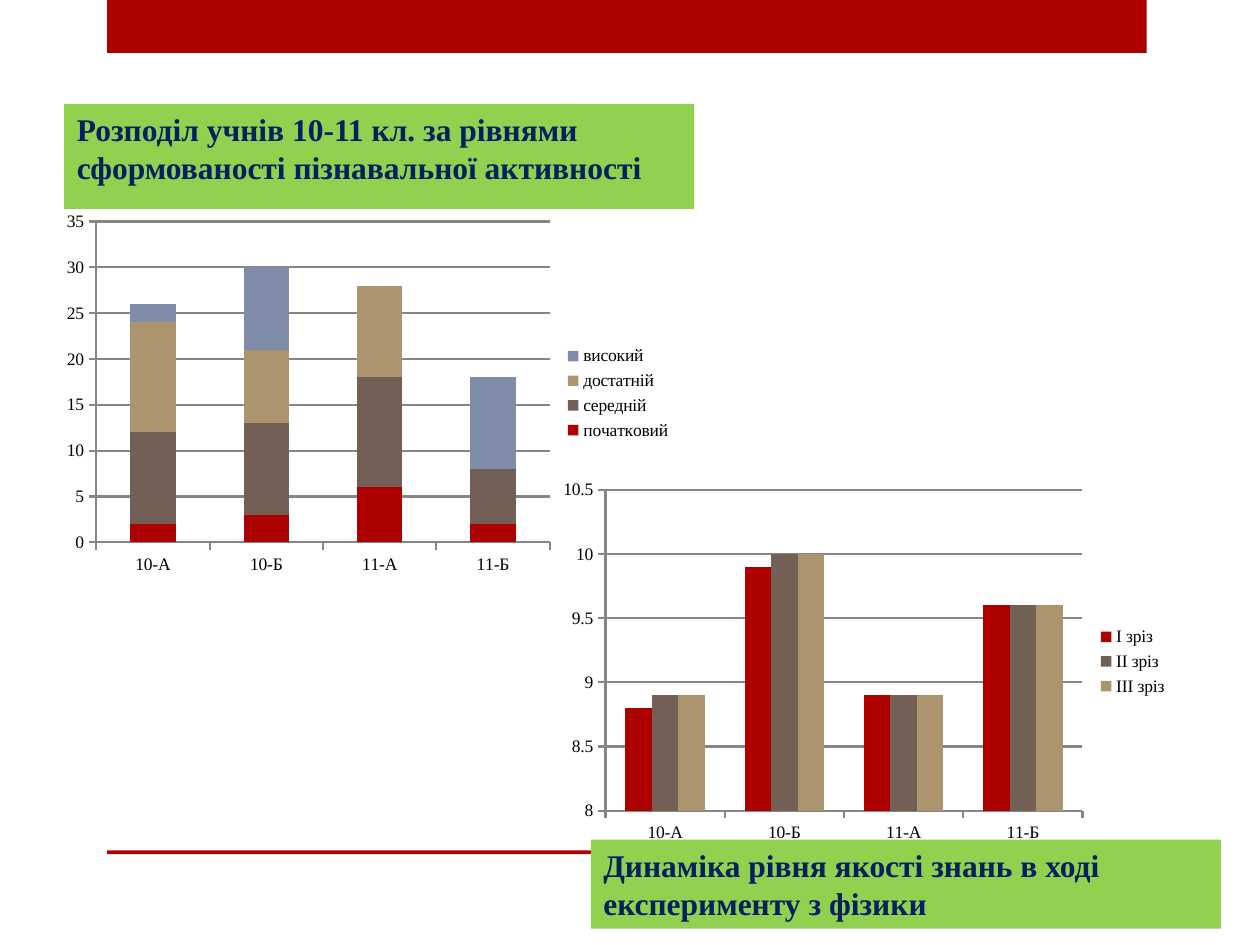
from pptx import Presentation
from pptx.chart.data import CategoryChartData
from pptx.dml.color import RGBColor
from pptx.enum.chart import XL_CHART_TYPE, XL_LEGEND_POSITION, XL_TICK_MARK
from pptx.enum.shapes import MSO_SHAPE
from pptx.enum.text import MSO_ANCHOR, MSO_AUTO_SIZE, PP_ALIGN
from pptx.util import Inches, Pt

RED = RGBColor(0xAD, 0x01, 0x01)
BROWN = RGBColor(0x72, 0x60, 0x56)
SAND = RGBColor(0xAC, 0x95, 0x6E)
STEEL = RGBColor(0x80, 0x8D, 0xA9)
GREEN = RGBColor(0x92, 0xD0, 0x50)
NAVY = RGBColor(0x00, 0x20, 0x60)
GRAY = RGBColor(0x86, 0x86, 0x86)
BLACK = RGBColor(0x00, 0x00, 0x00)

FONT = "Times New Roman"
COLORS = [RED, BROWN, SAND, STEEL]
FORMS = ["10-А", "10-Б", "11-А", "11-Б"]
LEVELS = {
    "початковий": [2, 3, 6, 2],
    "середній": [10, 10, 12, 6],
    "достатній": [12, 8, 10, 0],
    "високий": [2, 9, 0, 10],
}
TESTS = {
    "І зріз": [8.8, 9.9, 8.9, 9.6],
    "ІІ зріз": [8.9, 10, 8.9, 9.6],
    "ІІІ зріз": [8.9, 10, 8.9, 9.6],
}


class Deck:
    """Places elements by shares (percent) of the slide's width and height."""

    def __init__(self):
        self.prs = Presentation()
        self.prs.slide_width, self.prs.slide_height = Inches(10), Inches(7.5)
        self.slide = self.prs.slides.add_slide(self.prs.slide_layouts[5])

    def area(self, left, top, width, height):
        wide, high = self.prs.slide_width, self.prs.slide_height
        return [int(share * size / 100) for share, size in
                zip((left, top, width, height), (wide, high, wide, high))]

    def bar(self, *box):
        shape = self.slide.shapes.add_shape(MSO_SHAPE.RECTANGLE, *self.area(*box))
        shape.shadow.inherit = False
        shape.fill.solid()
        shape.fill.fore_color.rgb = RED
        shape.line.fill.background()

    def title(self, text, *box):
        self.label(self.slide.shapes.title, text, box)

    def note(self, text, *box):
        self.label(self.slide.shapes.add_textbox(*self.area(*box)), text, box)

    def label(self, shape, text, box):
        """Sets place, green fill and bold navy text of a caption."""
        shape.left, shape.top, shape.width, shape.height = self.area(*box)
        shape.fill.solid()
        shape.fill.fore_color.rgb = GREEN
        frame = shape.text_frame
        frame.text = text
        frame.word_wrap = True
        frame.auto_size = MSO_AUTO_SIZE.SHAPE_TO_FIT_TEXT
        frame.vertical_anchor = MSO_ANCHOR.TOP
        para = frame.paragraphs[0]
        para.alignment = PP_ALIGN.LEFT
        font = para.font
        font.name, font.size, font.bold = FONT, Pt(18), True
        font.color.rgb = NAVY

    def chart(self, kind, rows, low, high, step, *box):
        data = CategoryChartData()
        data.categories = FORMS
        for name, vals in rows.items():
            data.add_series(name, vals)
        chart = self.slide.shapes.add_chart(kind, *self.area(*box), data).chart
        chart.has_title = False
        chart.font.name, chart.font.size = FONT, Pt(10)
        chart.font.color.rgb = BLACK
        chart.has_legend = True
        chart.legend.position = XL_LEGEND_POSITION.RIGHT
        chart.legend.include_in_layout = False

        plot = chart.plots[0]
        plot.vary_by_categories = False
        plot.gap_width = 150
        plot.overlap = 100 if kind == XL_CHART_TYPE.COLUMN_STACKED else 0
        for series, color in zip(plot.series, COLORS):
            series.format.fill.solid()
            series.format.fill.fore_color.rgb = color

        axis = chart.value_axis
        axis.minimum_scale, axis.maximum_scale = low, high
        axis.major_unit = step
        axis.has_major_gridlines = True
        for part in (axis, chart.category_axis):
            part.major_tick_mark = XL_TICK_MARK.OUTSIDE
        for part in (axis, chart.category_axis, axis.major_gridlines):
            part.format.line.color.rgb = GRAY
            part.format.line.width = Pt(1.25)


def main():
    deck = Deck()
    deck.bar(8.5, 0, 82.5, 5.6)
    deck.bar(8.5, 90, 82.5, 0.4)
    deck.chart(XL_CHART_TYPE.COLUMN_STACKED, LEVELS, 0, 35, 5,
               4.3, 21.6, 50, 40)
    deck.title("Розподіл учнів 10-11 кл. за рівнями сформованості "
               "пізнавальної активності", 5.1, 11, 50, 9.43)
    deck.chart(XL_CHART_TYPE.COLUMN_CLUSTERED, TESTS, 8, 10.5, 0.5,
               43.7, 50, 50, 40)
    deck.note("Динаміка рівня якості знань в ході експерименту з фізики",
              46.9, 88.85, 50, 9.43)
    deck.prs.save("out.pptx")


if __name__ == "__main__":
    main()
